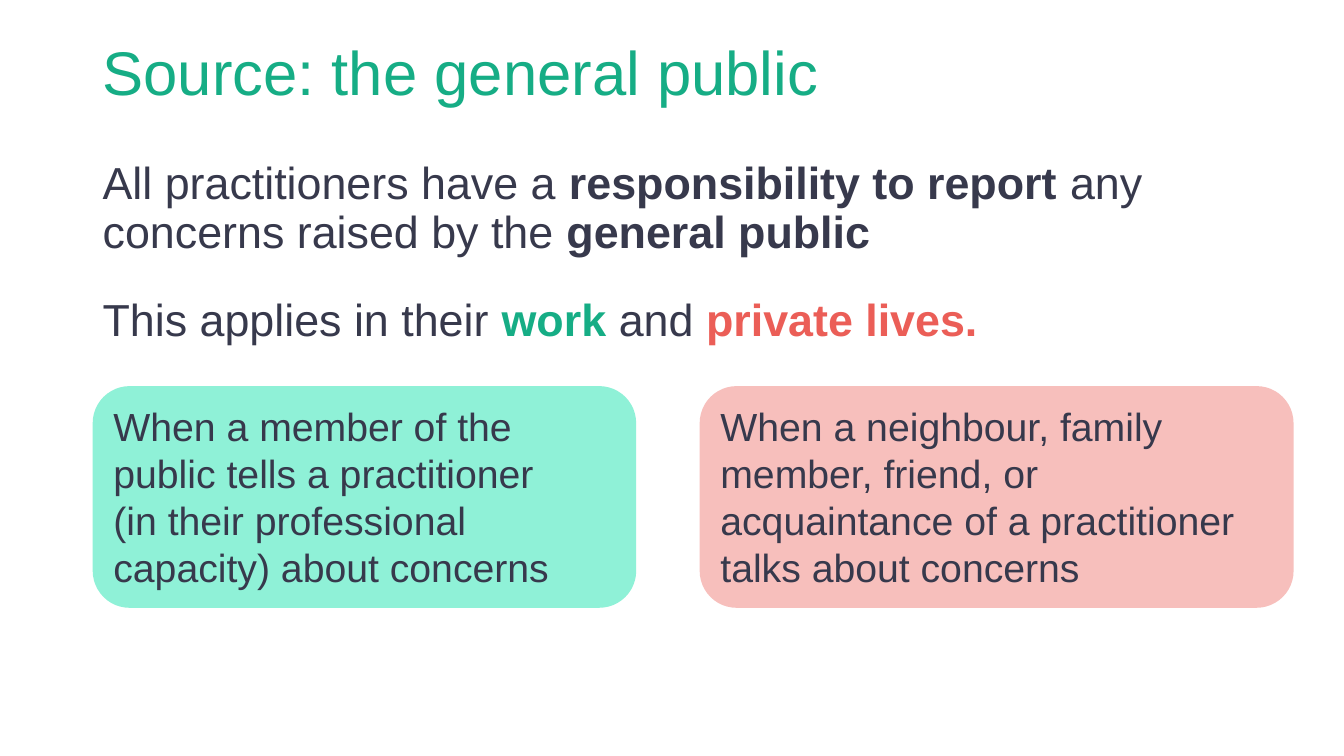
from pptx import Presentation
from pptx.dml.color import RGBColor
from pptx.enum.shapes import MSO_SHAPE
from pptx.enum.text import MSO_ANCHOR, PP_ALIGN
from pptx.util import Inches, Pt

ROUNDED = MSO_SHAPE.ROUNDED_RECTANGLE
TOP, MIDDLE = MSO_ANCHOR.TOP, MSO_ANCHOR.MIDDLE
LEFT = PP_ALIGN.LEFT

COLOURS = {
    "ink": "37394C",
    "work": "16AD85",
    "private": "EB5E57",
    "work_card": "8FF1D7",
    "private_card": "F7BFBC",
}


class Deck:
    """Holds the style and current slide; areas are percentages of the slide's size."""

    font_name = "Arial"

    def __init__(self):
        self.presentation = Presentation()
        self.presentation.slide_width = Inches(13.33)
        self.presentation.slide_height = Inches(7.5)
        self.slide = self.presentation.slides.add_slide(self.presentation.slide_layouts[6])

    def area(self, left, top, width, height):
        across = self.presentation.slide_width / 100
        down = self.presentation.slide_height / 100
        return [round(v) for v in (left * across, top * down, width * across, height * down)]

    def style(self, run, size, colour="ink", bold=False):
        run.font.name = self.font_name
        run.font.size = Pt(size)
        run.font.bold = bold
        run.font.color.rgb = RGBColor.from_string(COLOURS[colour])

    def text(self, area, paragraphs, size, anchor=TOP, after=0, before=0):
        frame = self.slide.shapes.add_textbox(*self.area(*area)).text_frame
        frame.word_wrap = True
        frame.vertical_anchor = anchor
        for index, pieces in enumerate(paragraphs):
            paragraph = frame.add_paragraph() if index else frame.paragraphs[0]
            paragraph.line_spacing = 0.9
            paragraph.space_before = Pt(before if index else 0)
            paragraph.space_after = Pt(after if index < len(paragraphs) - 1 else 0)
            for wording, colour, bold in pieces:
                run = paragraph.add_run()
                run.text = wording
                self.style(run, size, colour, bold)

    def card(self, area, wording, fill):
        card = self.slide.shapes.add_shape(ROUNDED, *self.area(*area))
        card.shadow.inherit = False
        card.fill.solid()
        card.fill.fore_color.rgb = RGBColor.from_string(COLOURS[fill])
        card.line.fill.background()
        frame = card.text_frame
        frame.word_wrap = True
        frame.vertical_anchor = TOP
        frame.text = wording
        frame.paragraphs[0].alignment = LEFT
        for run in frame.paragraphs[0].runs:
            self.style(run, 28)

    def save(self):
        self.presentation.save("out.pptx")


def main():
    margin, card_top, block_height = 6.9, 51.07, 29.33
    deck = Deck()
    deck.text((margin, 0.27, 86.27, 19.33),
              [[("Source: the general public", "work", False)]], 44, MIDDLE)
    duty = [
        ("All practitioners have a ", "ink", False),
        ("responsibility to report ", "ink", True),
        ("any concerns raised by the ", "ink", False),
        ("general public", "ink", True),
    ]
    scope = [
        ("This applies in their ", "ink", False),
        ("work ", "work", True),
        ("and ", "ink", False),
        ("private lives.", "private", True),
    ]
    deck.text((margin, 20.67, 89.42, block_height), [duty, scope], 32, after=18, before=10)
    deck.card((margin, card_top, 40.44, block_height),
              "When a member of the public tells a practitioner \v"
              "(in their professional capacity) about concerns", "work_card")
    deck.card((52.06, card_top, 44.19, block_height),
              "When a neighbour, family member, friend, or acquaintance "
              "of a practitioner talks about concerns", "private_card")
    deck.save()


if __name__ == "__main__":
    main()
